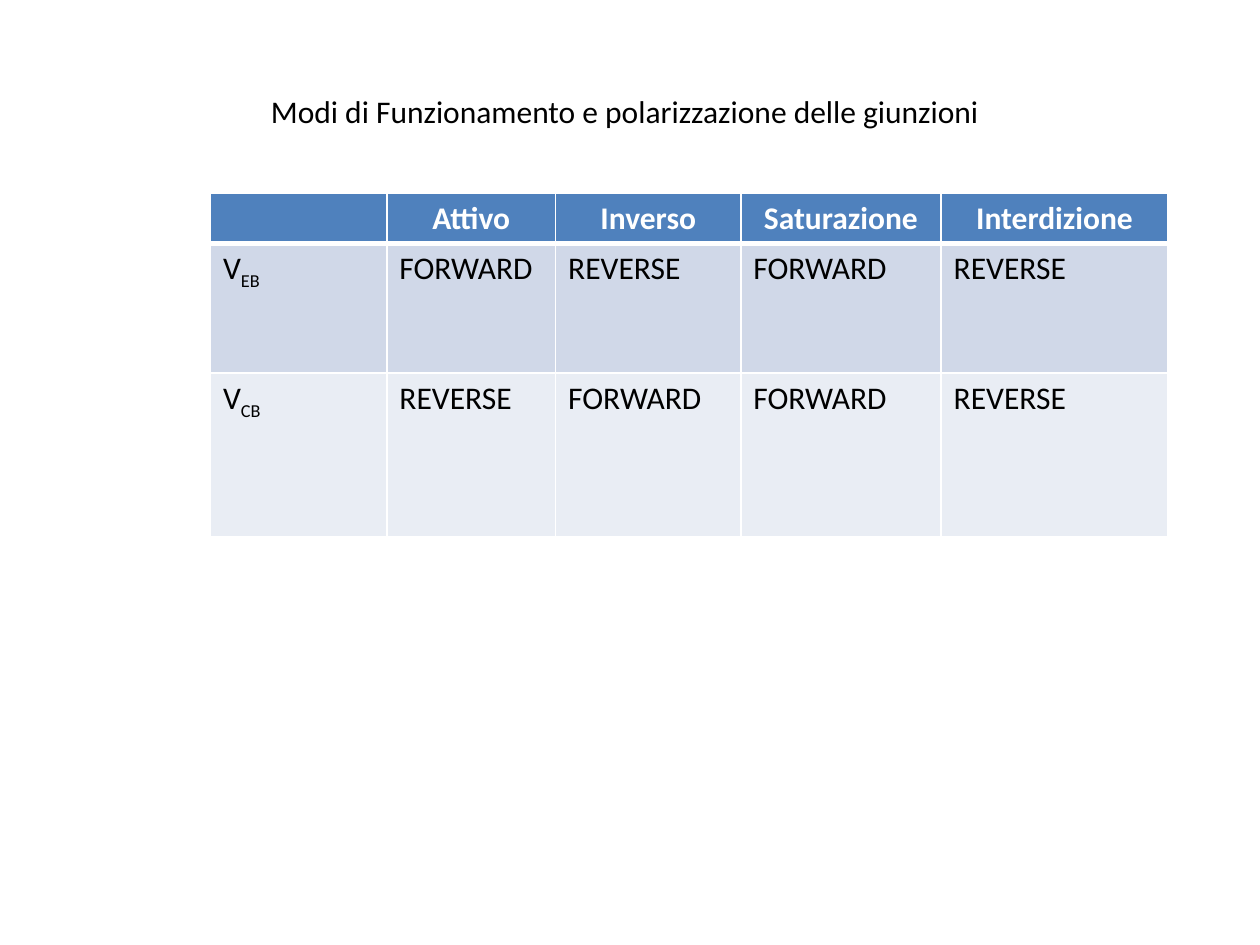
from dataclasses import dataclass

from lxml.etree import SubElement
from pptx import Presentation
from pptx.dml.color import RGBColor as Rgb
from pptx.enum.text import MSO_ANCHOR as Anchor, MSO_AUTO_SIZE as AutoSize, PP_ALIGN as Align
from pptx.oxml.ns import qn
from pptx.util import Inches, Pt


@dataclass(frozen=True)
class Theme:
    font: str = "Calibri"
    size: int = 18
    ink: str = "000000"
    paper: str = "FFFFFF"
    header: str = "4F81BD"
    thin: int = 1
    thick: int = 3


@dataclass(frozen=True)
class Row:
    height: float
    fill: str
    labels: tuple
    subscript: str = ""
    header: bool = False


THEME = Theme()
WIDTH, HEIGHT = 10, 7.5
TABLE_LEFT, TABLE_TOP = 1.67, 1.53
COLUMNS = (1.4, 1.34, 1.47, 1.59, 1.8)
ROWS = (
    Row(0.4, THEME.header, ("", "Attivo", "Inverso", "Saturazione", "Interdizione"), header=True),
    Row(1.03, "D0D8E8", ("V", "FORWARD", "REVERSE", "FORWARD", "REVERSE"), "EB"),
    Row(1.3, "E9EDF4", ("V", "REVERSE", "FORWARD", "FORWARD", "REVERSE"), "CB"),
)


def add_span(para, text: str, *, color: str = THEME.ink, bold: bool = False,
             baseline: int = 0) -> None:
    """Add formatted text; baseline is a percentage of the type size."""
    span = para.add_run()
    span.text = text
    span.font.name = THEME.font
    span.font.size = Pt(THEME.size)
    span.font.bold = bold
    span.font.color.rgb = Rgb.from_string(color)
    if baseline:
        span.font._element.set("baseline", str(baseline * 1000))


def set_borders(cell, *, top: int, bottom: int) -> None:
    properties = cell._tc.get_or_add_tcPr()
    widths = {"L": THEME.thin, "R": THEME.thin, "T": top, "B": bottom}
    for side, width in widths.items():
        line = SubElement(properties, qn(f"a:ln{side}"), w=str(Pt(width)))
        fill = SubElement(line, qn("a:solidFill"))
        SubElement(fill, qn("a:srgbClr"), val=THEME.paper)


def draw_title(page, text: str) -> None:
    box = page.shapes.title
    box.left, box.top = Inches(2.05), Inches(0.68)
    box.width, box.height = Inches(5.89), Inches(0.4)
    frame = box.text_frame
    frame.word_wrap = False
    frame.auto_size = AutoSize.SHAPE_TO_FIT_TEXT
    frame.vertical_anchor = Anchor.TOP
    para = frame.paragraphs[0]
    para.alignment = Align.LEFT
    add_span(para, text)


def draw_cell(cell, text: str, row: Row, *, subscript: str, below_header: bool) -> None:
    set_borders(cell, top=THEME.thick if below_header else THEME.thin,
                bottom=THEME.thick if row.header else THEME.thin)
    cell.fill.solid()
    cell.fill.fore_color.rgb = Rgb.from_string(row.fill)
    para = cell.text_frame.paragraphs[0]
    para.alignment = Align.CENTER if row.header else Align.LEFT
    if text:
        add_span(para, text, color=THEME.paper if row.header else THEME.ink, bold=row.header)
    if subscript:
        add_span(para, subscript, baseline=-25)


def draw_table(page, rows: tuple) -> None:
    height = sum(row.height for row in rows)
    table = page.shapes.add_table(
        len(rows), len(COLUMNS), Inches(TABLE_LEFT), Inches(TABLE_TOP),
        Inches(sum(COLUMNS)), Inches(height)).table
    for column, width in zip(table.columns, COLUMNS):
        column.width = Inches(width)
    for r, row in enumerate(rows):
        table.rows[r].height = Inches(row.height)
        for c, text in enumerate(row.labels):
            draw_cell(table.cell(r, c), text, row,
                      subscript=row.subscript if c == 0 else "",
                      below_header=r > 0 and rows[r - 1].header)


def main() -> None:
    deck = Presentation()
    deck.slide_width, deck.slide_height = Inches(WIDTH), Inches(HEIGHT)
    page = deck.slides.add_slide(deck.slide_layouts.get_by_name("Title Only"))
    # Operating modes and their junction bias
    draw_table(page, ROWS)
    draw_title(page, "Modi di Funzionamento e polarizzazione delle giunzioni")
    deck.save("out.pptx")


if __name__ == "__main__":
    main()
